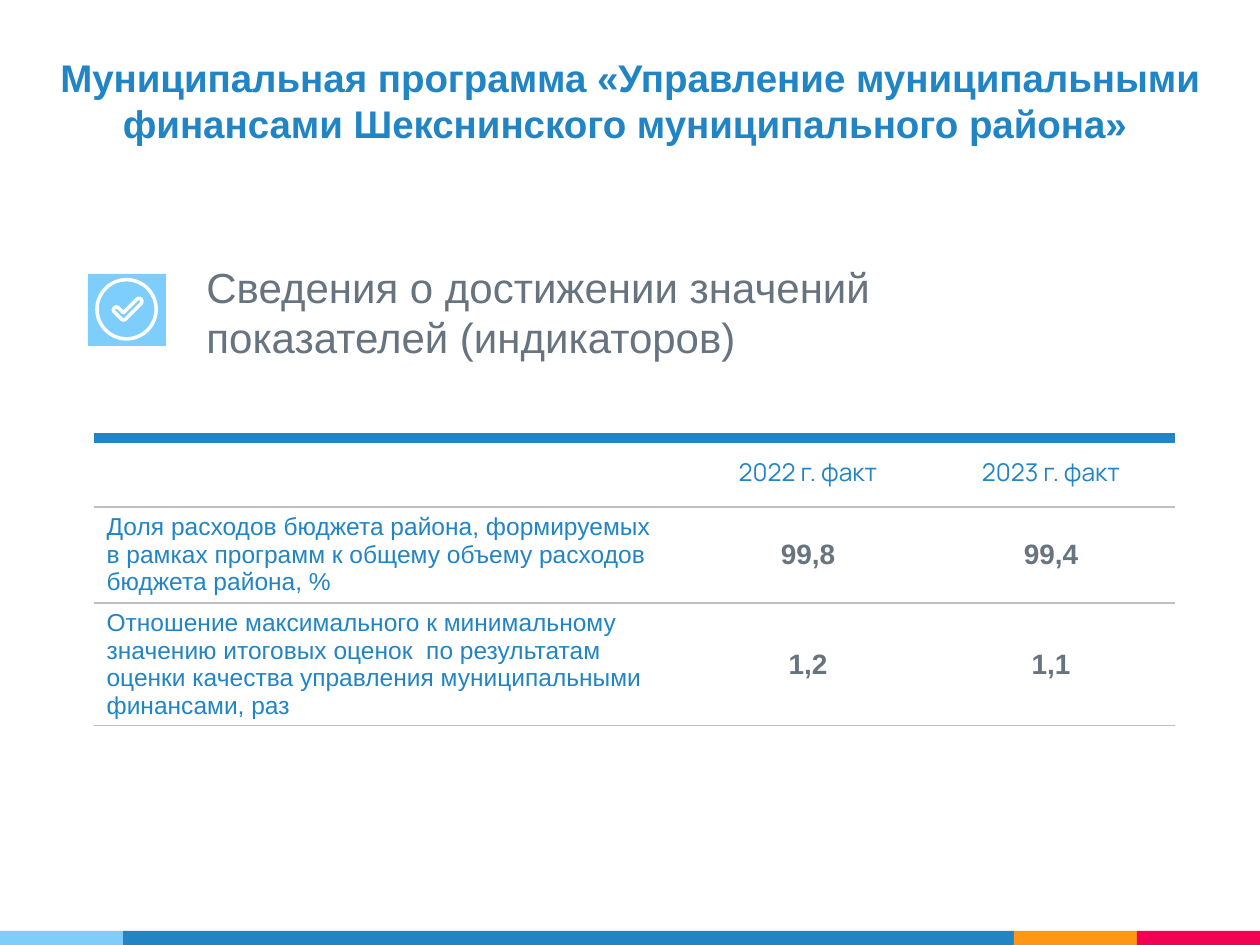
from math import cos, radians, sin

from lxml.etree import SubElement
from pptx import Presentation
from pptx.dml.color import RGBColor
from pptx.enum.shapes import MSO_SHAPE as Shape
from pptx.enum.text import MSO_ANCHOR as Anchor, MSO_AUTO_SIZE as AutoSize, PP_ALIGN as Align
from pptx.oxml.ns import qn
from pptx.util import Emu, Pt

PX = 914400 / 126
BLUE = RGBColor(0x21, 0x85, 0xC5)
SKY = RGBColor(0x7E, 0xCE, 0xFD)
ORANGE = RGBColor(0xFF, 0x97, 0x15)
CRIMSON = RGBColor(0xF2, 0x02, 0x53)
SLATE = RGBColor(0x67, 0x74, 0x80)
RULE = RGBColor(0xBF, 0xBF, 0xBF)
WHITE = RGBColor(0xFF, 0xFF, 0xFF)


def px(length):
    return Emu(round(length * PX))


def arc(x, y, radius, start, end, step=15):
    """Points along a circle arc, angles in degrees clockwise from the right."""
    return [(x + radius * cos(radians(a)), y + radius * sin(radians(a)))
            for a in range(start, end + 1, step)]


class Deck:
    font = "Arial"

    def __init__(self, width, height):
        self.prs = Presentation()
        self.prs.slide_width, self.prs.slide_height = px(width), px(height)
        self.slide = self.prs.slides.add_slide(self.prs.slide_layouts[5])
        self.shapes = self.slide.shapes

    def set_text(self, frame, text, size, color, bold=False, align=Align.LEFT, font=None):
        frame.text = text
        frame.word_wrap = True
        paragraph = frame.paragraphs[0]
        paragraph.alignment = align
        for run in paragraph.runs:
            run.font.name = font or self.font
            run.font.size, run.font.bold = Pt(size), bold
            run.font.color.rgb = color

    def title(self, text, x, y, w, h):
        heading = self.shapes.title
        heading.left, heading.top, heading.width, heading.height = map(px, (x, y, w, h))
        self.set_text(heading.text_frame, text, 22, BLUE, True, Align.CENTER)
        heading.text_frame.auto_size = AutoSize.NONE
        heading.text_frame.vertical_anchor = Anchor.MIDDLE

    def text(self, text, x, y, w, h, size, color):
        box = self.shapes.add_textbox(*map(px, (x, y, w, h)))
        self.set_text(box.text_frame, text, size, color)

    def block(self, x, y, w, h, color):
        rect = self.shapes.add_shape(Shape.RECTANGLE, *map(px, (x, y, w, h)))
        rect.shadow.inherit = False
        rect.fill.solid()
        rect.fill.fore_color.rgb = color
        rect.line.fill.background()

    def outline(self, contours, color, width):
        # The builder rounds to whole units, so points go in as tenths of a px
        first, *others = [[(x * 10, y * 10) for x, y in c] for c in contours]
        builder = self.shapes.build_freeform(*first[0], scale=PX / 10)
        builder.add_line_segments(first[1:], close=True)
        for contour in others:
            builder.move_to(*contour[0])
            builder.add_line_segments(contour[1:], close=True)
        drawing = builder.convert_to_shape()
        drawing.shadow.inherit = False
        drawing.fill.background()
        drawing.line.color.rgb = color
        drawing.line.width = Pt(width)

    def borders(self, cell, top, bottom):
        """Rule a cell above and below; each side is (color, points) or None."""
        props = cell._tc.get_or_add_tcPr()
        for tag, side in (("lnL", None), ("lnR", None), ("lnT", top), ("lnB", bottom)):
            line = SubElement(props, qn(f"a:{tag}"))
            if side is None:
                SubElement(line, qn("a:noFill"))
                continue
            color, points = side
            line.set("w", str(Pt(points)))
            fill = SubElement(line, qn("a:solidFill"))
            SubElement(fill, qn("a:srgbClr")).set("val", str(color))

    def table(self, rows, x, y, widths, heights):
        frame = self.shapes.add_table(len(rows), len(widths), px(x), px(y),
                                      px(sum(widths)), px(sum(heights)))
        grid = frame.table
        grid.first_row = grid.horz_banding = False
        for column, width in zip(grid.columns, widths):
            column.width = px(width)
        for r, (row, height) in enumerate(zip(rows, heights)):
            grid.rows[r].height = px(height)
            for c, content in enumerate(row):
                cell = grid.cell(r, c)
                self.borders(cell, (RULE, 0.75) if r else (BLUE, 6), (RULE, 0.75))
                cell.fill.background()
                if r == 0:
                    cell.margin_top = cell.margin_bottom = px(9)
                    look = (14, BLUE, False, Align.CENTER, "Manrope")
                elif c == 0:
                    look = (14, BLUE)
                else:
                    look = (16, SLATE, True, Align.CENTER)
                if r == 0 or c:
                    cell.vertical_anchor = Anchor.MIDDLE
                self.set_text(cell.text_frame, content, *look)


def main():
    deck = Deck(1260, 945)

    # Footer stripe
    stripe_x = 0
    for width, color in ((123, SKY), (891, BLUE), (123, ORANGE), (123, CRIMSON)):
        deck.block(stripe_x, 931, width, 14, color)
        stripe_x += width

    # Indicator table
    deck.table(
        [("", "2022 г. факт", "2023 г. факт"),
         ("Доля расходов бюджета района, формируемых  в рамках программ "
          "к общему объему расходов бюджета района, %", "99,8", "99,4"),
         ("Отношение максимального к минимальному значению итоговых оценок  "
          "по результатам оценки качества управления муниципальными финансами, раз",
          "1,2", "1,1")],
        94, 438, widths=(595, 238, 248), heights=(69, 96, 122))

    # Section heading
    deck.text("Сведения о достижении значений показателей (индикаторов)",
              194, 255, 761, 115, 24, SLATE)

    # Check mark icon: a ring and a rounded tick
    deck.block(88, 274, 78, 72, SKY)
    ring = arc(126.6, 309.3, 29.6, 0, 355, 5)
    tick = (arc(116.5, 310, 3, 135, 315) + [(123.5, 312.8)]
            + arc(139, 301.5, 3, -135, 45) + arc(123.5, 317, 3, 45, 135))
    deck.outline([ring, tick], WHITE, 2)

    # Title
    deck.title("Муниципальная программа «Управление муниципальными "
               "финансами Шекснинского муниципального района» ", 0, 16, 1261, 169)

    deck.prs.save("out.pptx")


if __name__ == "__main__":
    main()
